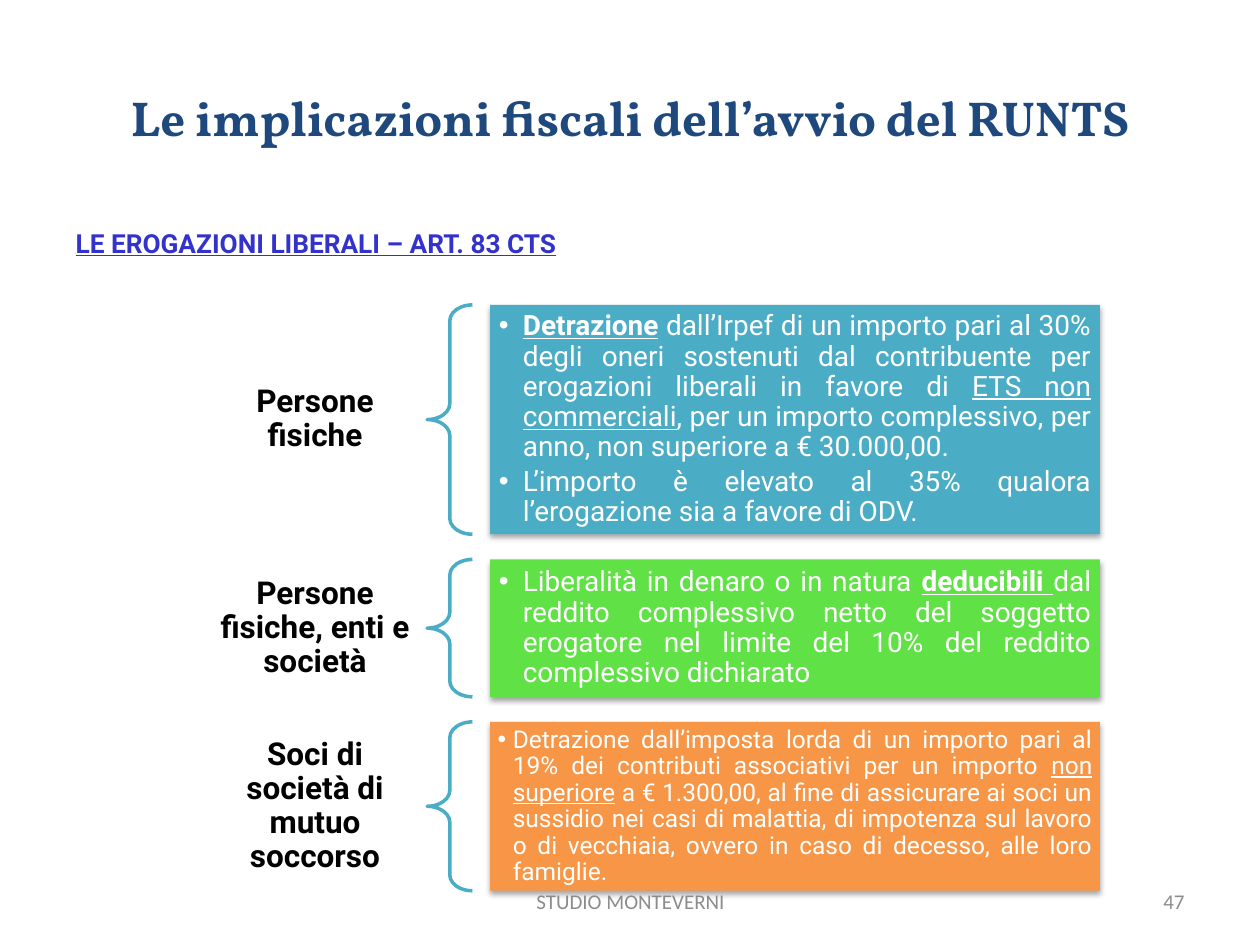
from dataclasses import dataclass

from lxml import etree
from pptx import Presentation
from pptx import util as u
from pptx.dml.color import RGBColor
from pptx.enum import shapes, text
from pptx.oxml.ns import qn

ALIGN = text.PP_ALIGN


@dataclass(frozen=True)
class Theme:
    title_font: str = "Vollkorn"
    body_font: str = "Roboto"
    footer_font: str = "Calibri"
    navy: str = "1F497D"
    indigo: str = "3333CC"
    teal: str = "4BACC6"
    green: str = "60E146"
    orange: str = "F79646"
    black: str = "000000"
    white: str = "FFFFFF"
    grey: str = "8C8C8C"
    title_size: int = 28
    heading_size: int = 15
    label_size: int = 18
    panel_size: int = 16
    small_panel_size: int = 14
    footer_size: int = 12


def write(paragraph, content, *, font, size, color, marks="", align=ALIGN.CENTER,
          line_spacing=None, before=0, after=0):
    """Write a string, or (string, marks) runs; marks hold b (bold) and u (underline)."""
    runs = [(content, marks)] if isinstance(content, str) else content
    paragraph.alignment = align
    paragraph.space_before, paragraph.space_after = u.Pt(before), u.Pt(after)
    if line_spacing:
        paragraph.line_spacing = line_spacing
    for words, run_marks in runs:
        run = paragraph.add_run()
        run.text = words
        run.font.name, run.font.size = font, u.Pt(size)
        run.font.color.rgb = RGBColor.from_string(color)
        run.font.bold = "b" in run_marks
        run.font.underline = "u" in run_marks


def set_bullet(paragraph, character=None, indent=0):
    properties = paragraph._p.get_or_add_pPr()
    properties.set("marL", str(u.Inches(indent)))
    properties.set("indent", str(-u.Inches(indent)))
    if character:
        etree.SubElement(properties, qn("a:buFont"), typeface="Arial")
        etree.SubElement(properties, qn("a:buChar"), char=character)
    else:
        etree.SubElement(properties, qn("a:buNone"))


def add_shadow(shape):
    effects = etree.SubElement(shape._element.spPr, qn("a:effectLst"))
    shadow = etree.SubElement(effects, qn("a:outerShdw"), blurRad=str(u.Pt(3.1)),
                              dist=str(u.Pt(1.8)), dir="5400000", rotWithShape="0")
    color = etree.SubElement(shadow, qn("a:srgbClr"), val="000000")
    etree.SubElement(color, qn("a:alpha"), val="35000")


def place(shape, left, top, width, height):
    shape.left, shape.top = u.Inches(left), u.Inches(top)
    shape.width, shape.height = u.Inches(width), u.Inches(height)


def set_frame(shape, anchor, horizontal=0.1, vertical=0.05):
    frame = shape.text_frame
    frame.word_wrap = True
    frame.auto_size = text.MSO_AUTO_SIZE.NONE
    frame.vertical_anchor = anchor
    frame.margin_left = frame.margin_right = u.Inches(horizontal)
    frame.margin_top = frame.margin_bottom = u.Inches(vertical)
    return frame


class SlideBuilder:
    def __init__(self, slide, theme):
        self.slide, self.theme = slide, theme

    def title(self, words):
        shape = self.slide.shapes.title
        place(shape, 0.5, 0.3, 9, 1.25)
        frame = set_frame(shape, text.MSO_ANCHOR.MIDDLE)
        write(frame.paragraphs[0], words, font=self.theme.title_font,
              size=self.theme.title_size, color=self.theme.navy, marks="b")

    def heading(self, words):
        shape = self.slide.placeholders[1]
        place(shape, 0.5, 1.75, 9, 4.95)
        paragraph = set_frame(shape, text.MSO_ANCHOR.TOP).paragraphs[0]
        write(paragraph, words, font=self.theme.body_font, size=self.theme.heading_size,
              color=self.theme.indigo, marks="bu", align=ALIGN.JUSTIFY, before=3)
        set_bullet(paragraph)

    def text_box(self, words, box, horizontal=0.1, **style):
        shape = self.slide.shapes.add_textbox(*map(u.Inches, box))
        frame = set_frame(shape, text.MSO_ANCHOR.MIDDLE, horizontal)
        write(frame.paragraphs[0], words, **style)

    def label(self, words, middle, height):
        self.text_box(words, (1.61, middle - height / 2, 1.78, height), horizontal=0.14,
                      font=self.theme.body_font, size=self.theme.label_size,
                      color=self.theme.black, marks="b", line_spacing=0.9)

    def brace(self, top, height):
        shape = self.slide.shapes.add_shape(
            shapes.MSO_SHAPE.LEFT_BRACE, *map(u.Inches, (3.39, top, 0.36, height)))
        shape.shadow.inherit = False
        shape.adjustments[0], shape.adjustments[1] = 0.35, 0.5
        shape.fill.background()
        shape.line.color.rgb = RGBColor.from_string(self.theme.teal)
        shape.line.width = u.Pt(2)

    def panel(self, items, top, height, fill, size, indent, margin):
        shape = self.slide.shapes.add_shape(
            shapes.MSO_SHAPE.RECTANGLE, *map(u.Inches, (3.89, top, 4.84, height)))
        shape.fill.solid()
        shape.fill.fore_color.rgb = RGBColor.from_string(fill)
        shape.line.fill.background()
        add_shadow(shape)
        frame = set_frame(shape, text.MSO_ANCHOR.MIDDLE, margin, margin)
        for number, runs in enumerate(items):
            paragraph = frame.add_paragraph() if number else frame.paragraphs[0]
            write(paragraph, runs, font=self.theme.body_font, size=size,
                  color=self.theme.white, align=ALIGN.JUSTIFY, line_spacing=0.9,
                  after=0.15 * size)
            set_bullet(paragraph, "•", indent)

    def footer(self, words, left, width, align):
        self.text_box(words, (left, 6.95, width, 0.4), font=self.theme.footer_font,
                      size=self.theme.footer_size, color=self.theme.grey, align=align)


def main():
    presentation = Presentation()
    presentation.slide_width, presentation.slide_height = u.Inches(10), u.Inches(7.5)
    slide = presentation.slides.add_slide(presentation.slide_layouts[1])
    theme = Theme()
    builder = SlideBuilder(slide, theme)

    # Title and section heading
    builder.title("Le implicazioni fiscali dell’avvio del RUNTS")
    builder.heading("LE EROGAZIONI LIBERALI – ART. 83 CTS")

    # Donors: label, label height, row height, fill, type size, indent, margin, bullets
    donors = [
        ("Persone fisiche", 1.06, 1.82, theme.teal, theme.panel_size, 0.19, 0.07, [
            [("Detrazione", "bu"),
             (" dall’Irpef di un importo pari al 30% degli oneri sostenuti dal "
              "contribuente per erogazioni liberali in favore di ", ""),
             ("ETS non commerciali", "u"),
             (", per un importo complessivo, per anno, non superiore a € 30.000,00.", "")],
            [("L’importo è elevato al 35% qualora l’erogazione sia a favore di ODV.", "")],
        ]),
        ("Persone fisiche, enti e società", 1.06, 1.09, theme.green, theme.panel_size,
         0.19, 0.07, [
            [("Liberalità in denaro o in natura ", ""), ("deducibili ", "bu"),
             ("dal reddito complessivo netto del soggetto erogatore nel limite del 10% "
              "del reddito complessivo dichiarato", "")],
        ]),
        ("Soci di società di mutuo soccorso", 1.16, 1.34, theme.orange,
         theme.small_panel_size, 0.12, 0.06, [
            [("Detrazione dall’imposta lorda di un importo pari al 19% dei contributi "
              "associativi per un importo ", ""),
             ("non superiore", "u"),
             (" a € 1.300,00, al fine di assicurare ai soci un sussidio nei casi di "
              "malattia, di impotenza sul lavoro o di vecchiaia, ovvero in caso di "
              "decesso, alle loro famiglie.", "")],
        ]),
    ]
    top, gap = 2.42, 0.2
    for name, label_height, height, fill, size, indent, margin, items in donors:
        builder.label(name, top + height / 2, label_height)
        builder.brace(top, height)
        builder.panel(items, top, height, fill, size, indent, margin)
        top += height + gap

    # Footer and slide number
    builder.footer("STUDIO MONTEVERNI", 3.42, 3.17, ALIGN.CENTER)
    builder.footer("47", 7.17, 2.33, ALIGN.RIGHT)

    presentation.save("out.pptx")


if __name__ == "__main__":
    main()
